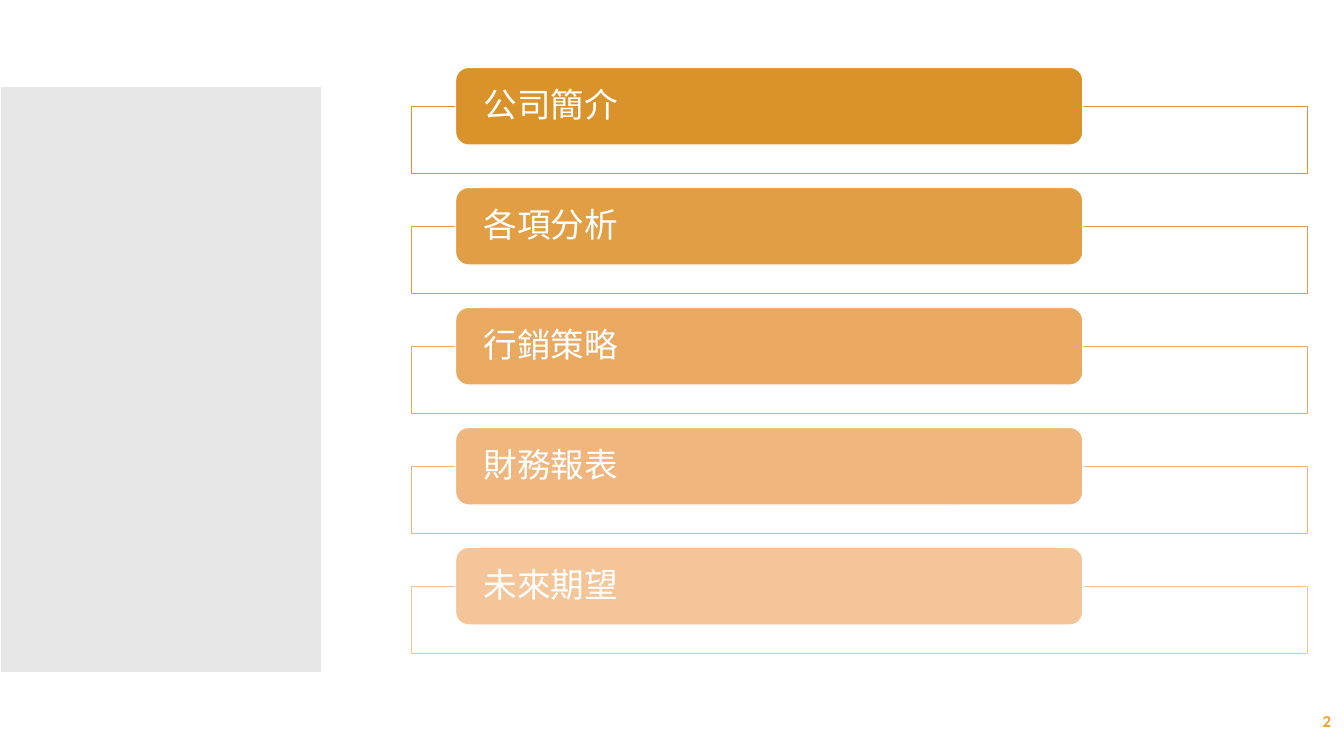
from dataclasses import dataclass

from pptx import Presentation
from pptx.dml.color import RGBColor
from pptx.enum.shapes import MSO_SHAPE
from pptx.enum.text import MSO_ANCHOR, PP_ALIGN
from pptx.util import Inches, Pt

RECT = MSO_SHAPE.RECTANGLE
ROUND = MSO_SHAPE.ROUNDED_RECTANGLE
MIDDLE = MSO_ANCHOR.MIDDLE
LEFT = PP_ALIGN.LEFT
RIGHT = PP_ALIGN.RIGHT

WIDE = Inches(13.33)
HIGH = Inches(7.5)
FONT = "Calibri"
WHITE = "FFFFFF"
GREY = "E6E6E6"
GOLD = "F0A22E"
STEP = 15.87


@dataclass(frozen=True)
class Box:
    """Place and size in percent of the slide."""
    left: float
    top: float
    width: float
    height: float

    def down(self, rows: int):
        """Return the box moved down by whole agenda rows."""
        return Box(self.left, self.top + rows * STEP, self.width, self.height)

    def frame(self) -> tuple[int, int, int, int]:
        """Return left, top, width and height in EMU."""
        return (int(WIDE * self.left / 100), int(HIGH * self.top / 100),
                int(WIDE * self.width / 100), int(HIGH * self.height / 100))


@dataclass(frozen=True)
class Topic:
    """One agenda entry and its colour."""
    label: str
    tint: str


PANEL = Box(0, 11.47, 23.93, 77.47)
TRAY = Box(30.6, 14.13, 66.7, 8.8)
BAR = Box(33.9, 8.93, 46.67, 10.27)
PAGE = Box(87.25, 92.67, 12.53, 5.33)

TOPICS = [
    Topic("公司簡介", "DA932A"),
    Topic("各項分析", "E29E44"),
    Topic("行銷策略", "E9A960"),
    Topic("財務報表", "F0B67D"),
    Topic("未來期望", "F5C59A"),
]


def shade(code: str) -> RGBColor:
    """Turn a hex string into a colour."""
    return RGBColor.from_string(code)


def block(slide, kind, box: Box, fill: str, line: str):
    """Draw a filled and outlined shape without shadow."""
    shape = slide.shapes.add_shape(kind, *box.frame())
    shape.shadow.inherit = False
    shape.fill.solid()
    shape.fill.fore_color.rgb = shade(fill)
    shape.line.color.rgb = shade(line)
    shape.line.width = Pt(0.85)
    return shape


def write(shape, words: str, size: int, tint: str, align, bold: bool = False):
    """Put one run of text, centred in height, into a shape."""
    frame = shape.text_frame
    frame.word_wrap = True
    frame.vertical_anchor = MIDDLE
    para = frame.paragraphs[0]
    para.alignment = align
    run = para.add_run()
    run.text = words
    run.font.name = FONT
    run.font.size = Pt(size)
    run.font.bold = bold
    run.font.color.rgb = shade(tint)
    return frame


def entry(slide, row: int, topic: Topic) -> None:
    """Draw one agenda row: its tray and its labelled bar."""
    block(slide, RECT, TRAY.down(row), WHITE, topic.tint)
    bar = block(slide, ROUND, BAR.down(row), topic.tint, WHITE)
    frame = write(bar, topic.label, 24, WHITE, LEFT)
    frame.margin_left = frame.margin_right = Inches(0.24)
    frame.margin_top = frame.margin_bottom = 0
    frame.paragraphs[0].line_spacing = 0.9


def main() -> None:
    """Build the agenda slide and save it."""
    deck = Presentation()
    deck.slide_width = WIDE
    deck.slide_height = HIGH
    slide = deck.slides.add_slide(deck.slide_layouts[6])
    for row, topic in enumerate(TOPICS):
        entry(slide, row, topic)
    block(slide, RECT, PANEL, GREY, WHITE)
    page = slide.shapes.add_textbox(*PAGE.frame())
    write(page, "2", 12, GOLD, RIGHT, bold=True)
    deck.save("out.pptx")


if __name__ == "__main__":
    main()
